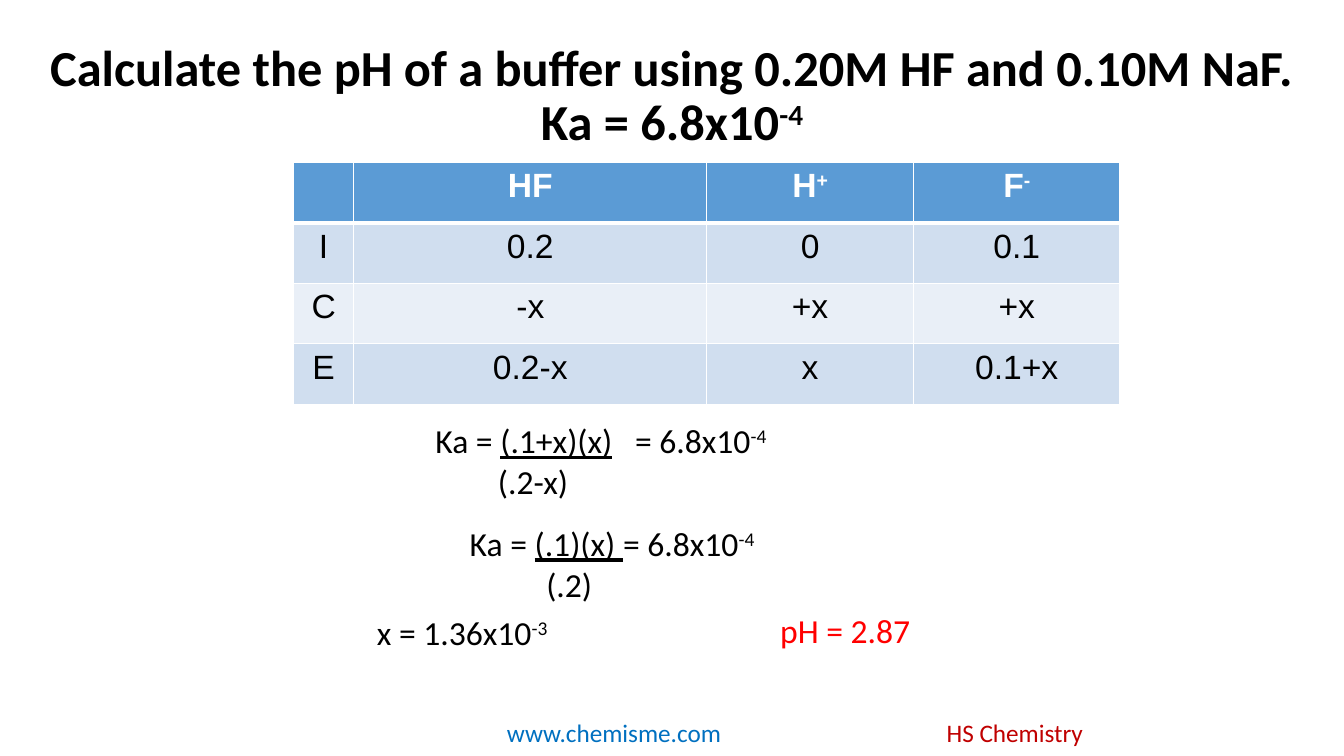
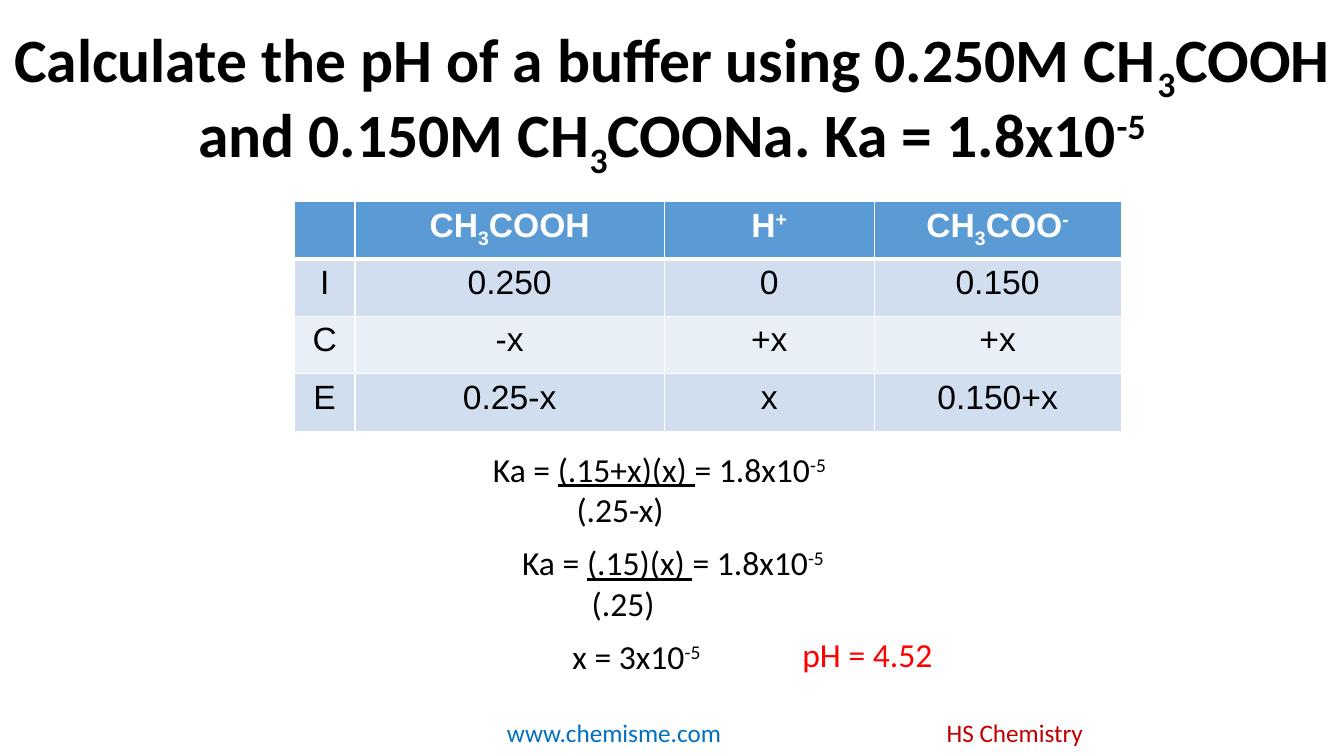
from dataclasses import dataclass

from lxml.etree import SubElement
from pptx import Presentation
from pptx.dml.color import RGBColor
from pptx.enum.text import MSO_ANCHOR, MSO_AUTO_SIZE, PP_ALIGN
from pptx.oxml.ns import qn
from pptx.util import Inches, Pt


@dataclass(frozen=True)
class Theme:
    black: str = "000000"
    white: str = "FFFFFF"
    answer: str = "FF0000"
    link: str = "0070C0"
    course: str = "C00000"
    header: str = "5B9BD5"
    bands: tuple = ("D0DEEF", "E9EFF7")
    body_font: str = "Calibri"
    table_font: str = "Arial"
    body_size: int = 24
    footer_size: int = 18


theme = Theme()
BASELINES = {"^": "30000", "_": "-25000"}


def write(para, text, color=theme.black, size=theme.body_size, name=theme.body_font, bold=False):
    for piece in text.split("|"):
        if piece == "\n":
            para.add_line_break()
            continue
        span = para.add_run()
        mark = piece[0] if piece[0] in "^_~" else ""
        span.text = piece[len(mark):]
        formats = {"name": name, "size": Pt(size), "bold": bold, "underline": mark == "~"}
        for key, value in formats.items():
            setattr(span.font, key, value)
        span.font.color.rgb = RGBColor.from_string(color)
        if mark in BASELINES:
            span._r.get_or_add_rPr().set("baseline", BASELINES[mark])


def add_box(page, left, top, width, height, text, **formats):
    box = page.shapes.add_textbox(Inches(left), Inches(top), Inches(width), Inches(height))
    box.text_frame.word_wrap = True
    write(box.text_frame.paragraphs[0], text, **formats)
    return box


problems = [
    {
        "title": "Calculate the pH of a buffer using 0.20M HF and 0.10M NaF.|\n|Ka = 6.8x10|^-4",
        "title_size": 36,
        "table_at": (2.91, 1.61),
        "columns": (0.6, 3.5, 2.05, 2.05),
        "row_height": 0.6,
        "rows": [
            ("", "HF", "H|^+", "F|^-"),
            ("I", "0.2", "0", "0.1"),
            ("C", "-x", "+x", "+x"),
            ("E", "0.2-x", "x", "0.1+x"),
        ],
        "equations": [
            (4.22, 4.12, "Ka = |~(.1+x)(x)\t|= 6.8x10|^-4", "(.2-x)", 0.62),
            (4.56, 5.14, "Ka = |~(.1)(x) |= 6.8x10|^-4", "(.2)", 0.76),
        ],
        "solution": (3.64, 6.02, "x = 1.36x10|^-3"),
        "answer": (7.64, 6, "pH = 2.87"),
    },
    {
        "title": "Calculate the pH of a buffer using 0.250M CH|_3|COOH and 0.150M CH|_3|COONa. Ka = 1.8x10|^-5",
        "title_size": 44,
        "table_at": (2.92, 2),
        "columns": (0.6, 3.07, 2.08, 2.45),
        "row_height": 0.57,
        "rows": [
            ("", "CH|_3|COOH", "H|^+", "CH|_3|COO|^-"),
            ("I", "0.250", "0", "0.150"),
            ("C", "-x", "+x", "+x"),
            ("E", "0.25-x", "x", "0.150+x"),
        ],
        "equations": [
            (4.79, 4.4, "Ka = |~(.15+x)(x) |= 1.8x10|^-5", "(.25-x)", 0.83),
            (5.08, 5.33, "Ka = |~(.15)(x) |= 1.8x10|^-5", "(.25)", 0.69),
        ],
        "solution": (5.58, 6.26, "x = 3x10|^-5"),
        "answer": (7.86, 6.24, "pH = 4.52"),
    },
]

deck = Presentation()
deck.slide_width, deck.slide_height = Inches(13.33), Inches(7.5)
layout = deck.slide_layouts.get_by_name("Title Only")
title_area = {"left": 0, "top": 0, "width": deck.slide_width, "height": Inches(1.93)}
for key, value in title_area.items():
    setattr(layout.placeholders[0], key, value)

pages = [deck.slides.add_slide(layout) for problem in problems]

footers = [(4.93, "www.chemisme.com", theme.link), (9.29, "HS Chemistry", theme.course)]
for number, (left, text, color) in enumerate(footers, start=20):
    footer = add_box(pages[0], left, 7.07, 2.41, 0.4, text, color=color, size=theme.footer_size)
    footer.element.nvSpPr.cNvPr.set("id", str(number))
    layout.shapes.element.append(footer.element)

for page, problem in zip(pages, problems):
    frame = page.shapes.title.text_frame
    frame_formats = {
        "auto_size": MSO_AUTO_SIZE.NONE,
        "word_wrap": True,
        "vertical_anchor": MSO_ANCHOR.MIDDLE,
    }
    for key, value in frame_formats.items():
        setattr(frame, key, value)
    para = frame.paragraphs[0]
    para.alignment, para.line_spacing = PP_ALIGN.CENTER, 0.9
    write(para, problem["title"], size=problem["title_size"], bold=True)

    rows, columns, row_height = problem["rows"], problem["columns"], problem["row_height"]
    left, top = problem["table_at"]
    table = page.shapes.add_table(
        len(rows), len(columns), Inches(left), Inches(top),
        Inches(sum(columns)), Inches(row_height * len(rows)),
    ).table
    for column, width in zip(table.columns, columns):
        column.width = Inches(width)
    for row_index, row in enumerate(rows):
        table.rows[row_index].height = Inches(row_height)
        is_header = row_index == 0
        fill = theme.header if is_header else theme.bands[(row_index - 1) % 2]
        for column_index, text in enumerate(row):
            cell = table.cell(row_index, column_index)
            borders = {"lnL": 1, "lnR": 1, "lnT": 3 if row_index == 1 else 1, "lnB": 3 if is_header else 1}
            for side, weight in borders.items():
                line = SubElement(cell._tc.get_or_add_tcPr(), qn(f"a:{side}"), w=str(Pt(weight)))
                SubElement(SubElement(line, qn("a:solidFill")), qn("a:srgbClr"), val=theme.white)
            cell.fill.solid()
            cell.fill.fore_color.rgb = RGBColor.from_string(fill)
            if text:
                para = cell.text_frame.paragraphs[0]
                para.alignment = PP_ALIGN.CENTER
                color = theme.white if is_header else theme.black
                write(para, text, color=color, name=theme.table_font, bold=is_header)

    for left, top, numerator, denominator, indent in problem["equations"]:
        box = add_box(page, left, top, 5.25, 0.91, numerator)
        if "\t" in numerator:
            tabs = SubElement(box.text_frame.paragraphs[0]._p.get_or_add_pPr(), qn("a:tabLst"))
            SubElement(tabs, qn("a:tab"), pos=str(Inches(1.98)), algn="l")
        para = box.text_frame.add_paragraph()
        para._p.get_or_add_pPr().set("marL", str(Inches(indent)))
        write(para, denominator)

    for key, color in (("solution", theme.black), ("answer", theme.answer)):
        left, top, text = problem[key]
        add_box(page, left, top, 4, 0.51, text, color=color)

deck.save("out.pptx")
